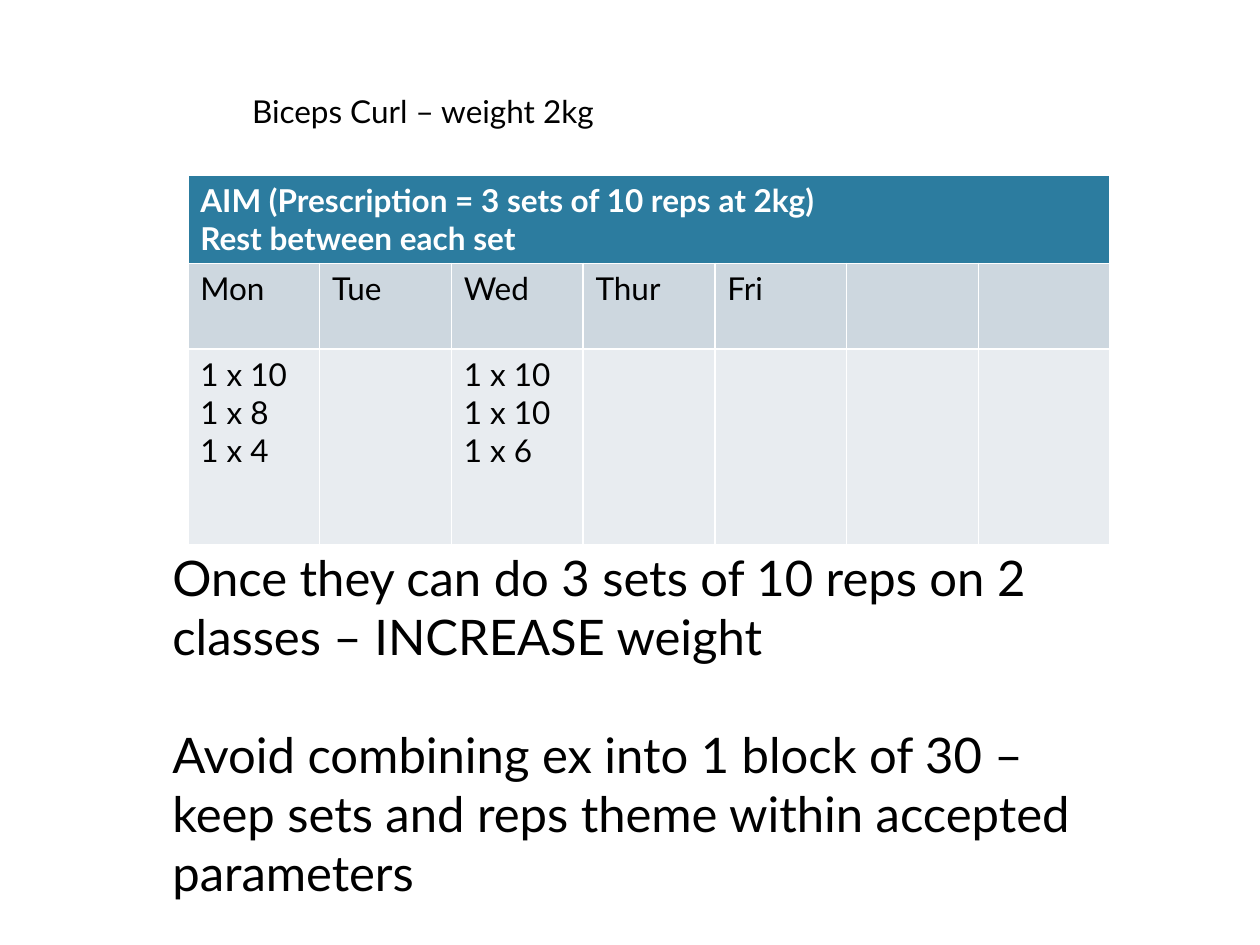
"""Build the biceps curl training record slide."""
from pptx import Presentation
from pptx.dml.color import RGBColor
from pptx.enum.text import MSO_ANCHOR, MSO_AUTO_SIZE, PP_ALIGN
from pptx.util import Inches, Pt

FONT = "Lato"
TITLE = "Biceps Curl – weight 2kg"
AIM = ["AIM (Prescription = 3 sets of 10 reps at 2kg)", "Rest between each set"]
DAYS = ["Mon", "Tue", "Wed", "Thur", "Fri", "", ""]
SETS = {"Mon": ["1 x 10", "1 x 8", "1 x 4"], "Wed": ["1 x 10", "1 x 10", "1 x 6"]}
ADVICE = [
    "Once they can do 3 sets of 10 reps on 2 classes – INCREASE weight",
    "Avoid combining ex into 1 block of 30 – keep sets and reps theme within accepted parameters",
]
ROW_HEIGHTS = [0.68, 0.68, 1.55]
ROW_FILLS = ["2C7C9F", "CDD7DF", "E8ECF0"]
TABLE_LEFT, TABLE_TOP, TABLE_WIDTH = 1.49, 1.39, 7.32


def color(value):
    return RGBColor.from_string(value)


def write(frame, lines, size=18, fill="000000", bold=False, gap=0):
    frame.word_wrap = True
    frame.vertical_anchor = MSO_ANCHOR.TOP
    for index, line in enumerate(lines):
        paragraph = frame.paragraphs[0] if index == 0 else frame.add_paragraph()
        paragraph.alignment = PP_ALIGN.LEFT
        paragraph.space_before = Pt(gap if index else 0)
        paragraph.font.size = Pt(size)
        run = paragraph.add_run()
        run.text = line
        run.font.name = FONT
        run.font.size = Pt(size)
        run.font.bold = bold
        run.font.color.rgb = color(fill)


def add_title(slide):
    title = slide.shapes.title
    title.left, title.top = Inches(1.9), Inches(0.68)
    title.width, title.height = Inches(6.18), Inches(0.4)
    title.text_frame.auto_size = MSO_AUTO_SIZE.NONE
    write(title.text_frame, [TITLE])


def add_record(slide):
    rows = [
        [AIM] + [[]] * (len(DAYS) - 1),
        [[day] if day else [] for day in DAYS],
        [SETS.get(day, []) for day in DAYS],
    ]
    table = slide.shapes.add_table(
        len(rows), len(DAYS), Inches(TABLE_LEFT), Inches(TABLE_TOP),
        Inches(TABLE_WIDTH), Inches(sum(ROW_HEIGHTS))).table
    for row_index, row in enumerate(rows):
        table.rows[row_index].height = Inches(ROW_HEIGHTS[row_index])
        is_header = row_index == 0
        for column_index, lines in enumerate(row):
            cell = table.cell(row_index, column_index)
            cell.fill.solid()
            cell.fill.fore_color.rgb = color(ROW_FILLS[row_index])
            write(cell.text_frame, lines, bold=is_header,
                  fill="FFFFFF" if is_header else "000000")
    table.cell(0, 0).merge(table.cell(0, len(DAYS) - 1))


def add_advice(slide):
    advice = slide.shapes.add_textbox(Inches(1.27), Inches(4.3), Inches(7.44), Inches(2.93))
    write(advice.text_frame, ADVICE, size=28, gap=33.6)


def main():
    presentation = Presentation()
    presentation.slide_width, presentation.slide_height = Inches(10), Inches(7.5)
    slide = presentation.slides.add_slide(presentation.slide_layouts.get_by_name("Title Only"))
    add_title(slide)
    add_record(slide)
    add_advice(slide)
    presentation.save("out.pptx")


if __name__ == "__main__":
    main()
